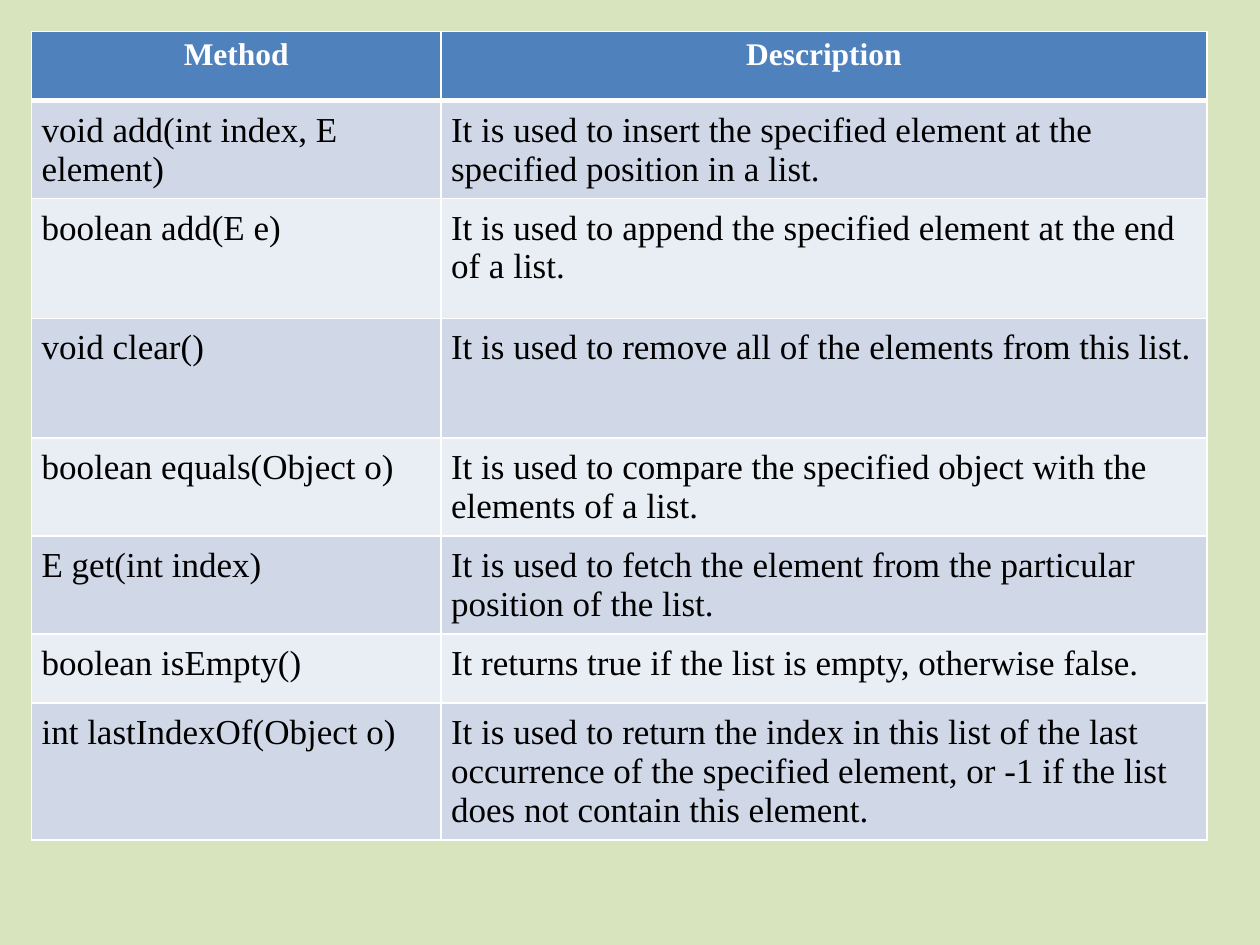
from dataclasses import dataclass

from lxml.etree import SubElement as Sub
from pptx import Presentation
from pptx.dml.color import RGBColor as Rgb
from pptx.enum.text import PP_ALIGN as Align
from pptx.oxml.ns import qn
from pptx.util import Inches, Pt


@dataclass(frozen=True)
class Theme:
    """Hold the colours, font and type sizes."""
    back: str = "D7E4BD"
    head: str = "4F81BD"
    odd: str = "D0D8E8"
    even: str = "E9EDF4"
    light: str = "FFFFFF"
    dark: str = "000000"
    font: str = "Times New Roman"
    top: int = 18
    body: int = 20


THEME = Theme()
COLS = (3.25, 6.08)
TALL = (0.55, 0.55, 0.95, 0.95, 0.55, 0.55, 0.55, 0.55)
ROWS = (
    ("Method", "Description"),
    ("void add(int index, E element)",
     "It is used to insert the specified element at the specified position in a list."),
    ("boolean add(E e)",
     "It is used to append the specified element at the end of a list."),
    ("void clear()",
     "It is used to remove all of the elements from this list."),
    ("boolean equals(Object o)",
     "It is used to compare the specified object with the elements of a list."),
    ("E get(int index)",
     "It is used to fetch the element from the particular position of the list."),
    ("boolean isEmpty()",
     "It returns true if the list is empty, otherwise false."),
    ("int lastIndexOf(Object o)",
     "It is used to return the index in this list of the last occurrence of the "
     "specified element, or -1 if the list does not contain this element."),
)


def write(frame, text, size=THEME.body, color=THEME.dark, bold=False, align=Align.LEFT):
    """Put formatted text into a frame."""
    para = frame.paragraphs[0]
    para.alignment = align
    run = para.add_run()
    run.text = text
    font = run.font
    font.name, font.size, font.bold = THEME.font, Pt(size), bold
    font.color.rgb = Rgb.from_string(color)


def edge(cell, **wide):
    """Draw cell borders with widths in points by side."""
    props = cell._tc.get_or_add_tcPr()
    for side in "LRTB":
        line = Sub(props, qn(f"a:ln{side}"), w=str(Pt(wide.get(side, 1))))
        Sub(Sub(line, qn("a:solidFill")), qn("a:srgbClr"), val=THEME.light)


def paint(cell, color):
    """Fill a cell with one colour."""
    cell.fill.solid()
    cell.fill.fore_color.rgb = Rgb.from_string(color)


def top(cell, text):
    """Build a header cell."""
    edge(cell, B=3)
    paint(cell, THEME.head)
    write(cell.text_frame, text, size=THEME.top, color=THEME.light,
          bold=True, align=Align.CENTER)


def body(cell, text, row):
    """Build a banded body cell."""
    edge(cell, T=3 if row == 1 else 1)
    paint(cell, THEME.odd if row % 2 else THEME.even)
    cell.margin_left = cell.margin_right = Inches(0.08)
    cell.margin_top = cell.margin_bottom = Inches(0.08)
    write(cell.text_frame, text)


def grid(slide):
    """Add the table of methods."""
    table = slide.shapes.add_table(
        len(ROWS), len(COLS), Inches(0.25), Inches(0.25),
        Inches(sum(COLS)), Inches(sum(TALL))).table
    for col, wide in zip(table.columns, COLS):
        col.width = Inches(wide)
    for row, tall in zip(table.rows, TALL):
        row.height = Inches(tall)
    for r, texts in enumerate(ROWS):
        for c, text in enumerate(texts):
            cell = table.cell(r, c)
            if r:
                body(cell, text, r)
            else:
                top(cell, text)


def main():
    """Build and save the slide."""
    deck = Presentation()
    deck.slide_width, deck.slide_height = Inches(10), Inches(7.5)
    slide = deck.slides.add_slide(deck.slide_layouts[6])
    fill = slide.background.fill
    fill.solid()
    fill.fore_color.rgb = Rgb.from_string(THEME.back)
    grid(slide)
    deck.save("out.pptx")


if __name__ == "__main__":
    main()
